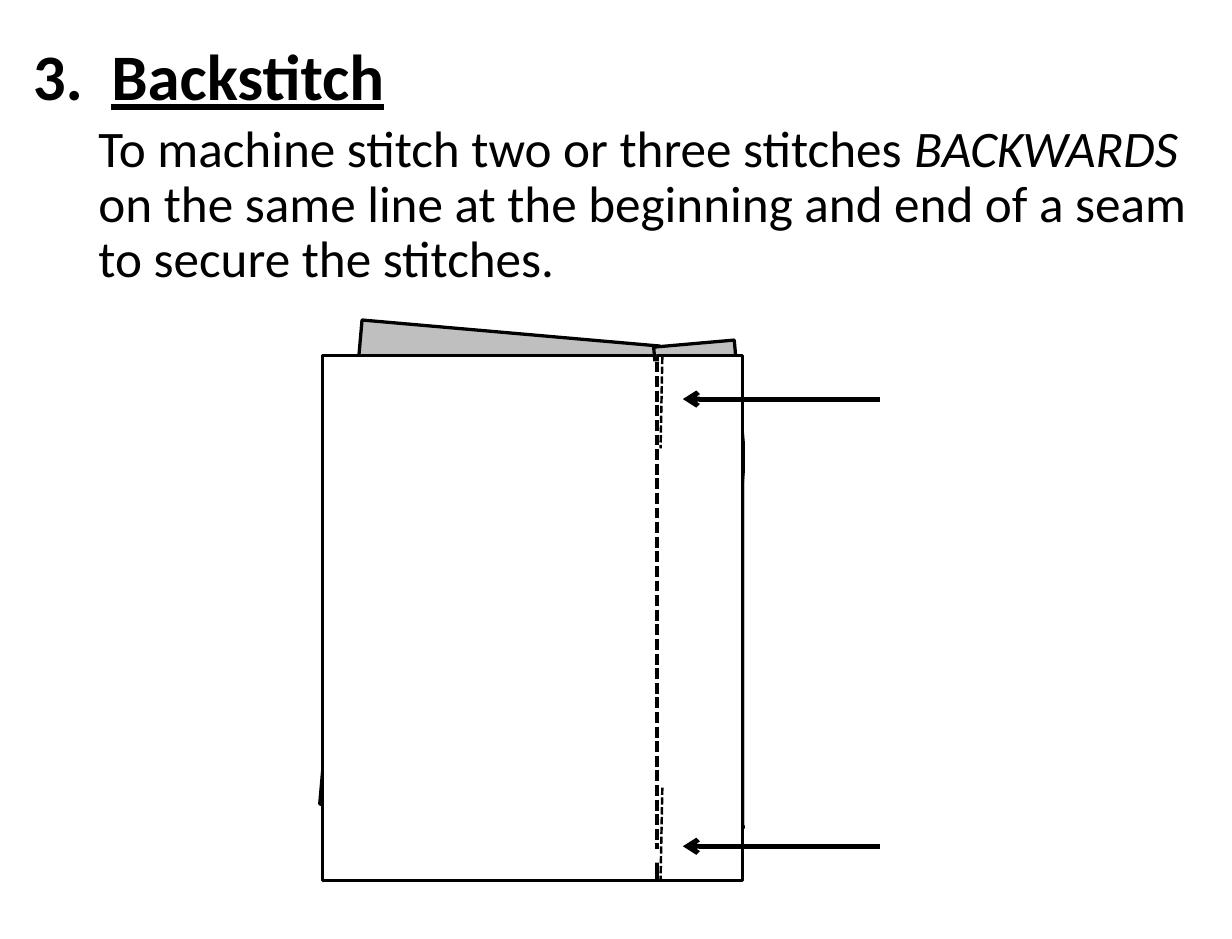
from dataclasses import dataclass

from lxml.etree import SubElement
from pptx import Presentation
from pptx.dml.color import RGBColor
from pptx.enum.dml import MSO_LINE
from pptx.enum.shapes import MSO_CONNECTOR, MSO_SHAPE
from pptx.oxml.ns import qn
from pptx.util import Inches, Pt

COLUMNS, ROWS = 105, 80


@dataclass(frozen=True)
class Theme:
    font: str = "Calibri"
    ink: RGBColor = RGBColor(0x00, 0x00, 0x00)
    front: RGBColor = RGBColor(0xFF, 0xFF, 0xFF)
    back: RGBColor = RGBColor(0xBF, 0xBF, 0xBF)
    heading: float = 39.8
    body: float = 31.4
    outline: float = 2
    seam: float = 2.25
    backstitch: float = 1.5
    arrow: float = 3


@dataclass(frozen=True)
class Box:
    """An area of the slide, in grid columns and rows."""
    left: float
    top: float
    width: float
    height: float

    def inner(self, left, top, width, height):
        return Box(self.left + left, self.top + top, width, height)


THEME = Theme()


def cells(count):
    return Inches(count / 10)


def place(box):
    return cells(box.left), cells(box.top), cells(box.width), cells(box.height)


def add_run(paragraph, text, size, bold=False, italic=False, underline=False):
    run = paragraph.add_run()
    run.text = text
    font = run.font
    font.name, font.size = THEME.font, Pt(size)
    font.bold, font.italic, font.underline = bold, italic, underline
    font.color.rgb = THEME.ink


def add_definition(slide, box):
    frame = slide.shapes.add_textbox(*place(box)).text_frame
    frame.word_wrap = True
    frame.margin_left = frame.margin_right = Inches(0.11)

    heading = frame.paragraphs[0]
    heading.line_spacing = 0.9
    properties = heading._p.get_or_add_pPr()
    tabs = SubElement(properties, qn("a:tabLst"))
    SubElement(tabs, qn("a:tab"), pos=str(Inches(0.67)), algn="l")
    add_run(heading, "3.\t", THEME.heading, bold=True)
    add_run(heading, "Backstitch", THEME.heading, bold=True, underline=True)

    body = frame.add_paragraph()
    body.line_spacing = 0.9
    body.space_before = Pt(5)
    body._p.get_or_add_pPr().set("marL", str(Inches(0.56)))
    add_run(body, "To machine stitch two or three stitches ", THEME.body)
    add_run(body, "BACKWARDS", THEME.body, italic=True)
    add_run(body, " on the same line at the beginning and end of a seam "
                  "to secure the stitches.", THEME.body)


def add_fabric(slide, box, fill, rotation=0, outlined=True):
    shape = slide.shapes.add_shape(MSO_SHAPE.RECTANGLE, *place(box))
    shape.shadow.inherit = False
    shape.rotation = rotation
    shape.fill.solid()
    shape.fill.fore_color.rgb = fill
    if outlined:
        shape.line.color.rgb = THEME.ink
        shape.line.width = Pt(THEME.outline)
    else:
        shape.line.fill.background()


def add_line(slide, box, start, end, width, dashed=False):
    """Draw a dashed stitch line, or a solid line with an arrowhead at its end."""
    points = [cells(value) for x, y in (start, end)
              for value in (box.left + x, box.top + y)]
    connector = slide.shapes.add_connector(MSO_CONNECTOR.STRAIGHT, *points)
    line = connector.line
    line.color.rgb, line.width = THEME.ink, Pt(width)
    if dashed:
        line.dash_style = MSO_LINE.SQUARE_DOT
    else:
        SubElement(line._get_or_add_ln(), qn("a:tailEnd"), type="arrow")
    SubElement(connector._element.spPr, qn("a:effectLst"))


def add_seam_diagram(slide, box):
    seam, allowance = 28.5, 7.3
    # Each side of the seam: left edge, width, then the back layer's
    # inset, rise, width and tilt
    sides = [(0, seam, 1.5, 2, 25.5, 5),
             (seam, allowance, 1.5, 1.1, 6.9, -5)]
    for left, width, inset, rise, back_width, tilt in sides:
        back = box.inner(left + inset, -rise, back_width, 41.4)
        add_fabric(slide, back, THEME.back, tilt)
        add_fabric(slide, box.inner(left, 0, width, box.height), THEME.front)

    # Plain covers hide the back layer's overhang and the join of the panels
    for cover in (box.inner(36, 4, 5.6, 40.6), box.inner(26.8, 0.5, 3.4, 42.7)):
        add_fabric(slide, cover, THEME.front, outlined=False)

    add_line(slide, box, (seam, 0.5), (seam, 42), THEME.seam, dashed=True)
    for top, arrow_row in ((0.1, 3.7), (36.8, 41.8)):
        add_line(slide, box, (seam + 0.45, top), (seam + 0.3, top + 7.8),
                 THEME.backstitch, dashed=True)
        add_line(slide, box, (box.width, arrow_row), (30.7, arrow_row), THEME.arrow)


def main():
    presentation = Presentation()
    presentation.slide_width = cells(COLUMNS)
    presentation.slide_height = cells(ROWS)
    slide = presentation.slides.add_slide(presentation.slide_layouts[6])
    add_definition(slide, Box(1.7, 3.3, 101.7, 29.2))
    add_seam_diagram(slide, Box(27.5, 30.3, 47.5, 44.7))
    presentation.save("out.pptx")


if __name__ == "__main__":
    main()
